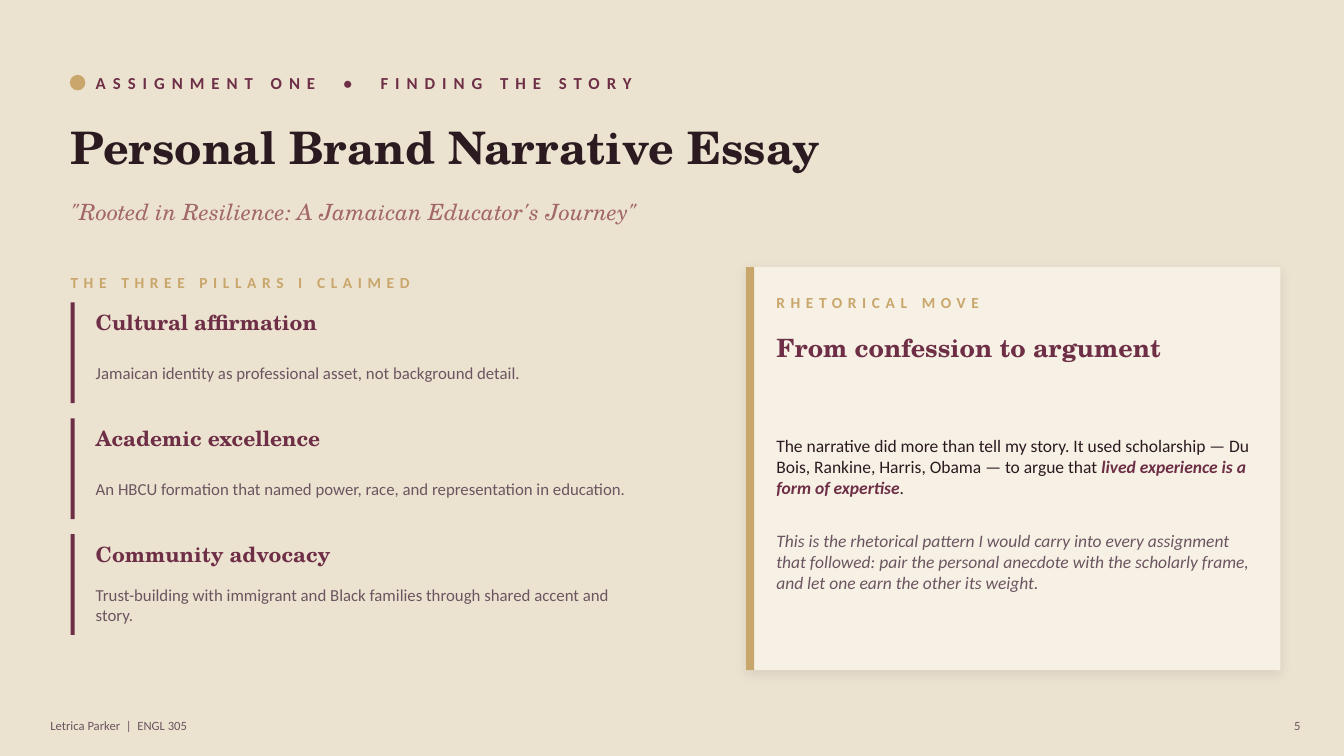
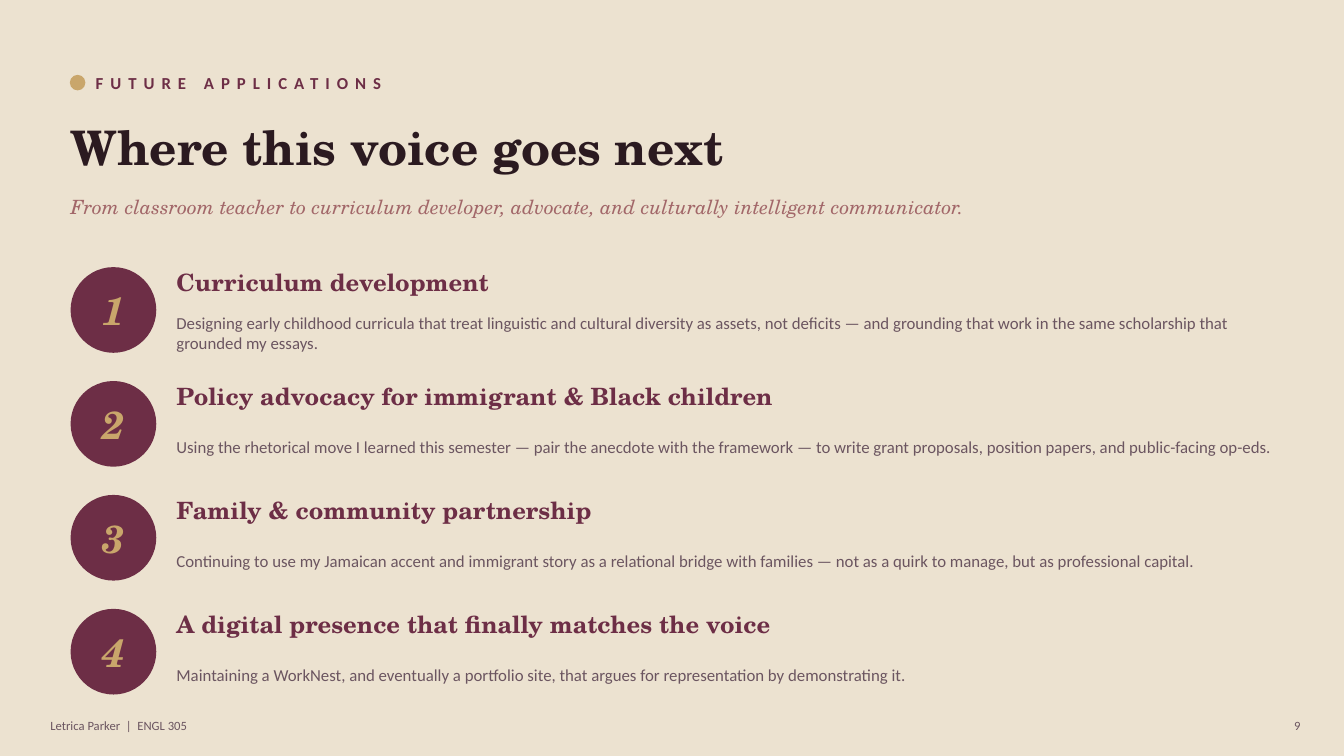
from dataclasses import dataclass, replace

from lxml.etree import SubElement
from pptx import Presentation
from pptx.dml.color import RGBColor
from pptx.enum.shapes import MSO_SHAPE as Shape
from pptx.enum.text import MSO_ANCHOR as Anchor, MSO_AUTO_SIZE as AutoSize, PP_ALIGN as Align
from pptx.oxml.ns import qn
from pptx.util import Inches, Pt

COLORS = {
    "sand": "ECE2D0",
    "cream": "F7F1E5",
    "gold": "C9A66B",
    "wine": "6D2E46",
    "rose": "A26769",
    "ink": "2B1A20",
    "mauve": "6B5560",
}
SERIF, SANS = "TeX Gyre Schola", "Calibri"


@dataclass(frozen=True)
class Style:
    face: str
    size: float
    color: str
    bold: bool = False
    italic: bool = False
    spacing: float = 0

    def apply(self, font):
        font.name, font.size = self.face, Pt(self.size)
        font.bold, font.italic = self.bold, self.italic
        font.color.rgb = rgb(self.color)


EYEBROW = Style(SANS, 12, "wine", bold=True, spacing=5)
LABEL = Style(SANS, 11, "gold", bold=True, spacing=4)
TITLE = Style(SERIF, 32, "ink", bold=True)
SUBTITLE = Style(SERIF, 16, "rose", italic=True)
HEADING = Style(SERIF, 15, "wine", bold=True)
BODY = Style(SANS, 12, "mauve")
FOOTER = Style(SANS, 9, "mauve")
NUMERAL = Style(SERIF, 28, "gold", bold=True, italic=True)
ARGUMENT = Style(SANS, 12.5, "ink")
EMPHASIS = Style(SANS, 12.5, "wine", bold=True, italic=True)
REFLECTION = Style(SANS, 12.5, "mauve", italic=True)


def rgb(name):
    return RGBColor.from_string(COLORS[name])


class Slides:
    """Holds the deck, its shared look and the current page."""

    def __init__(self):
        self.deck = Presentation()
        self.deck.slide_width, self.deck.slide_height = Inches(13.33), Inches(7.5)
        backdrop = self.deck.slide_master.background.fill
        backdrop.solid()
        backdrop.fore_color.rgb = rgb("sand")
        self.page = None

    def start(self, number, eyebrow, title, subtitle, title_size, subtitle_size, subtitle_height):
        """Add a page with its heading block and footer."""
        self.page = self.deck.slides.add_slide(self.deck.slide_layouts[5])
        heading = self.page.shapes.title
        heading.left, heading.top = Inches(0.7), Inches(1.1)
        heading.width, heading.height = Inches(12), Inches(0.7)
        self.set_text(heading, title, replace(TITLE, size=title_size))

        self.shape(Shape.OVAL, 0.7, 0.75, 0.14, 0.14, "gold", outline=1)
        self.text(0.95, 0.65, 8, 0.35, eyebrow, EYEBROW)
        self.text(0.7, 1.85, 12, subtitle_height, subtitle, replace(SUBTITLE, size=subtitle_size))
        self.text(0.5, 7.05, 6, 0.3, "Letrica Parker  |  ENGL 305", FOOTER)
        self.text(12.6, 7.05, 0.3, 0.3, str(number), FOOTER, Align.RIGHT)

    def shape(self, kind, left, top, width, height, color, outline=0):
        item = self.page.shapes.add_shape(
            kind, Inches(left), Inches(top), Inches(width), Inches(height))
        item.shadow.inherit = False
        item.fill.solid()
        item.fill.fore_color.rgb = rgb(color)
        if outline:
            item.line.color.rgb = rgb(color)
            item.line.width = Pt(outline)
        else:
            item.line.fill.background()
        return item

    def frame(self, box):
        """Give a box zero margins, middle anchoring and wrapping."""
        frame = box.text_frame
        frame.margin_left = frame.margin_top = frame.margin_right = frame.margin_bottom = 0
        frame.auto_size = AutoSize.NONE
        frame.vertical_anchor = Anchor.MIDDLE
        frame.word_wrap = True
        return frame

    def set_text(self, box, words, style, align=Align.LEFT):
        para = self.frame(box).paragraphs[0]
        para.alignment = align
        span = para.add_run()
        span.text = words
        style.apply(para.font)
        if style.spacing:
            span.font._element.set("spc", str(round(style.spacing * 100)))

    def box(self, left, top, width, height):
        return self.page.shapes.add_textbox(
            Inches(left), Inches(top), Inches(width), Inches(height))

    def text(self, left, top, width, height, words, style, align=Align.LEFT):
        self.set_text(self.box(left, top, width, height), words, style, align)

    def entry(self, left, top, width, heading, detail, heading_size):
        """Place a heading with its detail below."""
        self.text(left, top, width, 0.4, heading, replace(HEADING, size=heading_size))
        self.text(left, top + 0.4, width, 0.6, detail, BODY)

    def passage(self, left, top, width, height, paragraphs):
        """Fill a box with paragraphs given as (space after, [(words, style), ...])."""
        frame = self.frame(self.box(left, top, width, height))
        for index, (space_after, parts) in enumerate(paragraphs):
            para = frame.add_paragraph() if index else frame.paragraphs[0]
            para.space_after = Pt(space_after)
            for words, style in parts:
                span = para.add_run()
                span.text = words
                if len(parts) > 1:
                    style.apply(span.font)
            if len(parts) == 1:
                parts[0][1].apply(para.font)

    def card(self, left, top, width, height):
        """Draw a panel with a soft shadow and a gold edge."""
        panel = self.shape(Shape.RECTANGLE, left, top, width, height, "cream")
        effects = panel._element.spPr.find(qn("a:effectLst"))
        shadow = SubElement(effects, qn("a:outerShdw"), blurRad=str(Pt(8)), dist=str(Pt(2)),
                            dir="5400000", algn="bl", rotWithShape="0")
        shade = SubElement(shadow, qn("a:srgbClr"), val="000000")
        SubElement(shade, qn("a:alpha"), val="8000")
        self.shape(Shape.RECTANGLE, left, top, 0.08, height, "gold")


def essay_page(slides):
    slides.start(5, "ASSIGNMENT ONE  •  FINDING THE STORY", "Personal Brand Narrative Essay",
                 "\"Rooted in Resilience: A Jamaican Educator's Journey\"", 32, 16, 0.5)

    # Three pillars
    slides.text(0.7, 2.65, 6, 0.3, "THE THREE PILLARS I CLAIMED", LABEL)
    pillars = [
        ("Cultural affirmation",
         "Jamaican identity as professional asset, not background detail."),
        ("Academic excellence",
         "An HBCU formation that named power, race, and representation in education."),
        ("Community advocacy",
         "Trust-building with immigrant and Black families through shared accent and story."),
    ]
    for index, (heading, detail) in enumerate(pillars):
        top = 3 + 1.15 * index
        slides.shape(Shape.RECTANGLE, 0.7, top, 0.04, 1, "wine")
        slides.entry(0.95, top, 5.5, heading, detail, 15)

    # Rhetorical move card
    slides.card(7.4, 2.65, 5.3, 4)
    slides.text(7.7, 2.85, 4.8, 0.3, "RHETORICAL MOVE", LABEL)
    slides.text(7.7, 3.2, 4.8, 0.5, "From confession to argument", replace(HEADING, size=18))
    slides.passage(7.7, 3.75, 4.8, 2.7, [
        (23, [
            ("The narrative did more than tell my story. It used scholarship — Du Bois, "
             "Rankine, Harris, Obama — to argue that ", ARGUMENT),
            ("lived experience is a form of expertise", EMPHASIS),
            (".", ARGUMENT),
        ]),
        (4, [
            ("This is the rhetorical pattern I would carry into every assignment that "
             "followed: pair the personal anecdote with the scholarly frame, and let one "
             "earn the other its weight.", REFLECTION),
        ]),
    ])


def future_page(slides):
    slides.start(9, "FUTURE APPLICATIONS", "Where this voice goes next",
                 "From classroom teacher to curriculum developer, advocate, and culturally "
                 "intelligent communicator.", 34, 14, 0.4)

    # Numbered goals
    goals = [
        ("Curriculum development",
         "Designing early childhood curricula that treat linguistic and cultural diversity as "
         "assets, not deficits — and grounding that work in the same scholarship that grounded "
         "my essays."),
        ("Policy advocacy for immigrant & Black children",
         "Using the rhetorical move I learned this semester — pair the anecdote with the "
         "framework — to write grant proposals, position papers, and public-facing op-eds."),
        ("Family & community partnership",
         "Continuing to use my Jamaican accent and immigrant story as a relational bridge with "
         "families — not as a quirk to manage, but as professional capital."),
        ("A digital presence that finally matches the voice",
         "Maintaining a WorkNest, and eventually a portfolio site, that argues for "
         "representation by demonstrating it."),
    ]
    for index, (heading, detail) in enumerate(goals):
        top = 2.65 + 1.13 * index
        badge = slides.shape(Shape.OVAL, 0.7, top, 0.85, 0.85, "wine")
        slides.set_text(badge, str(index + 1), NUMERAL, Align.CENTER)
        slides.entry(1.75, top - 0.05, 11, heading, detail, 17)


def main():
    slides = Slides()
    essay_page(slides)
    future_page(slides)
    slides.deck.save("out.pptx")


if __name__ == "__main__":
    main()
